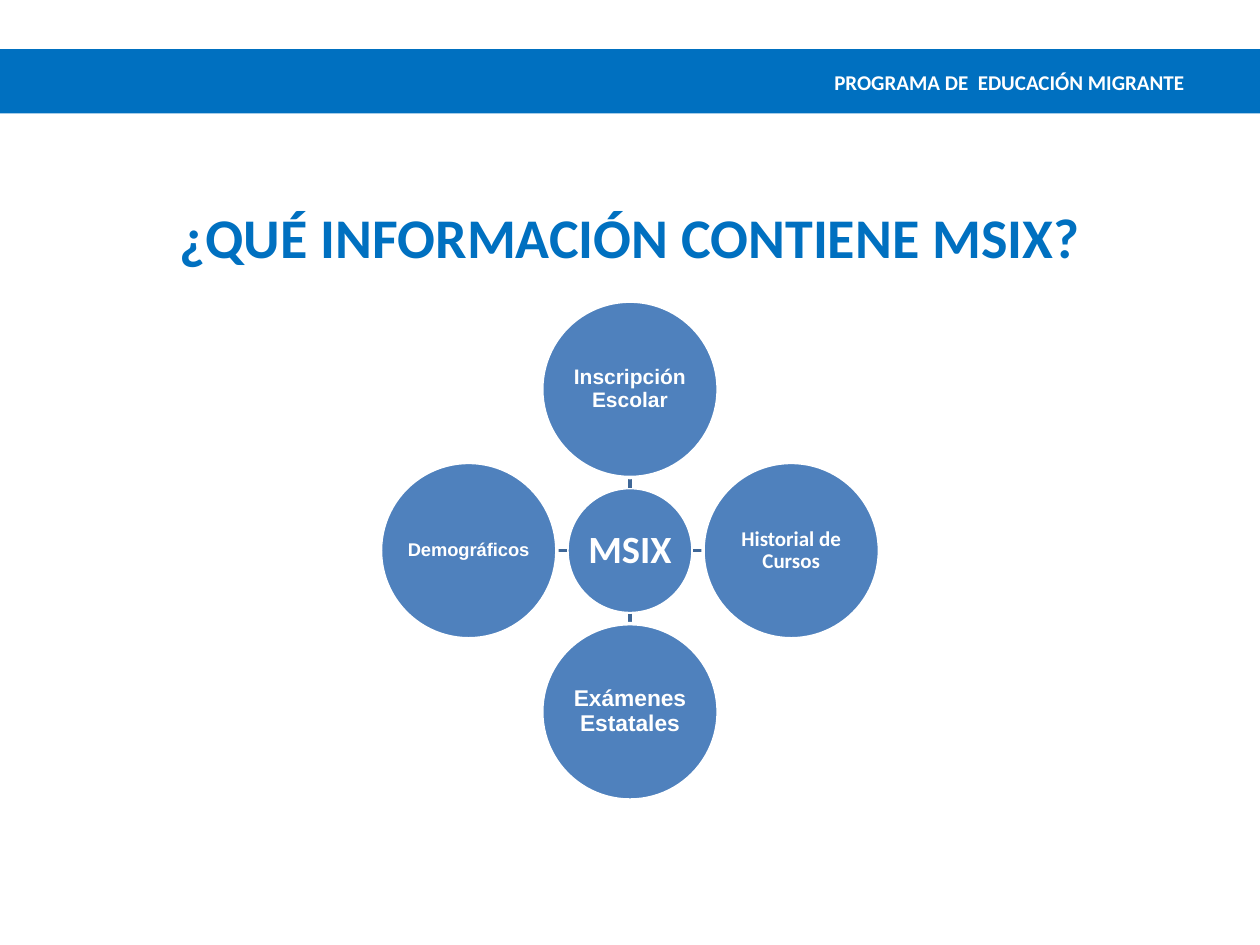
from pptx import Presentation
from pptx.dml.color import RGBColor
from pptx.enum.shapes import MSO_CONNECTOR, MSO_SHAPE
from pptx.enum.text import MSO_ANCHOR, PP_ALIGN
from pptx.oxml.ns import qn
from pptx.util import Inches, Pt
from lxml import etree

RECT, OVAL = MSO_SHAPE.RECTANGLE, MSO_SHAPE.OVAL
STRAIGHT = MSO_CONNECTOR.STRAIGHT
TOP, MIDDLE = MSO_ANCHOR.TOP, MSO_ANCHOR.MIDDLE
CENTER, RIGHT = PP_ALIGN.CENTER, PP_ALIGN.RIGHT

BLUE, CIRCLE, SPOKE, WHITE = "0070C0", "4F81BD", "3F6797", "FFFFFF"


def rgb(value):
    return RGBColor.from_string(value)


def write(sp, text, size, font, color, align=CENTER, anchor=MIDDLE):
    tf = sp.text_frame
    tf.word_wrap = True
    tf.vertical_anchor = anchor
    p = tf.paragraphs[0]
    p.alignment = align
    r = p.add_run()
    r.text = text
    r.font.size = Pt(size)
    r.font.name = font
    r.font.bold = True
    r.font.color.rgb = rgb(color)
    return tf, p


def add_filled(s, kind, x, y, w, h, fill):
    sp = s.shapes.add_shape(kind, Inches(x), Inches(y), Inches(w), Inches(h))
    sp.shadow.inherit = False
    sp.fill.solid()
    sp.fill.fore_color.rgb = rgb(fill)
    sp.line.fill.background()
    return sp


def add_header(s, x, y, w, h):
    add_filled(s, RECT, x, y, w, h, BLUE)
    box = s.shapes.add_textbox(Inches(x + 1.92), Inches(y + 0.11), Inches(w - 2.42), Inches(0.5))
    write(box, "PROGRAMA DE  EDUCACIÓN MIGRANTE", 12, "Calibri", WHITE, RIGHT, TOP)


def add_title(s, x, y, w, h):
    box = s.shapes.add_textbox(Inches(x), Inches(y), Inches(w), Inches(h))
    write(box, "¿QUÉ INFORMACIÓN CONTIENE MSIX?", 32, "Calibri", BLUE)


def add_circle(s, cx, cy, d, text, size, font):
    sp = add_filled(s, OVAL, cx - d / 2, cy - d / 2, d, d, CIRCLE)
    sp.line.color.rgb = rgb(WHITE)
    sp.line.width = Pt(2)
    tf, p = write(sp, text, size, font, WHITE)
    tf.margin_left = tf.margin_right = tf.margin_top = tf.margin_bottom = 0
    p.line_spacing = 0.9


def add_spoke(s, x1, y1, x2, y2):
    line = s.shapes.add_connector(STRAIGHT, Inches(x1), Inches(y1), Inches(x2), Inches(y2))
    line.line.color.rgb = rgb(SPOKE)
    line.line.width = Pt(2)
    etree.SubElement(line._element.spPr, qn("a:effectLst"))


def add_radial(s, x, y, side):
    hub, outer = 1, 1.4
    cx, cy = x + side / 2, y + side / 2
    orbit = (side - outer) / 2
    satellites = [
        (0, -1, "Inscripción Escolar", 12, "Arial"),
        (1, 0, "Historial de Cursos", 12, "Calibri"),
        (0, 1, "Exámenes Estatales", 13, "Arial"),
        (-1, 0, "Demográficos", 10.5, "Arial"),
    ]
    add_circle(s, cx, cy, hub, "MSIX", 22, "Calibri")
    for dx, dy, text, size, font in satellites:
        start, end = hub / 2, orbit - outer / 2
        add_spoke(s, cx + dx * start, cy + dy * start, cx + dx * end, cy + dy * end)
        add_circle(s, cx + dx * orbit, cy + dy * orbit, outer, text, size, font)


def main():
    prs = Presentation()
    prs.slide_width, prs.slide_height = Inches(10), Inches(7.5)
    s = prs.slides.add_slide(prs.slide_layouts[6])
    add_header(s, 0, 0.39, 10, 0.51)
    add_title(s, 0.5, 1.25, 9, 1.25)
    add_radial(s, 3.02, 2.39, 3.96)
    prs.save("out.pptx")


if __name__ == "__main__":
    main()
